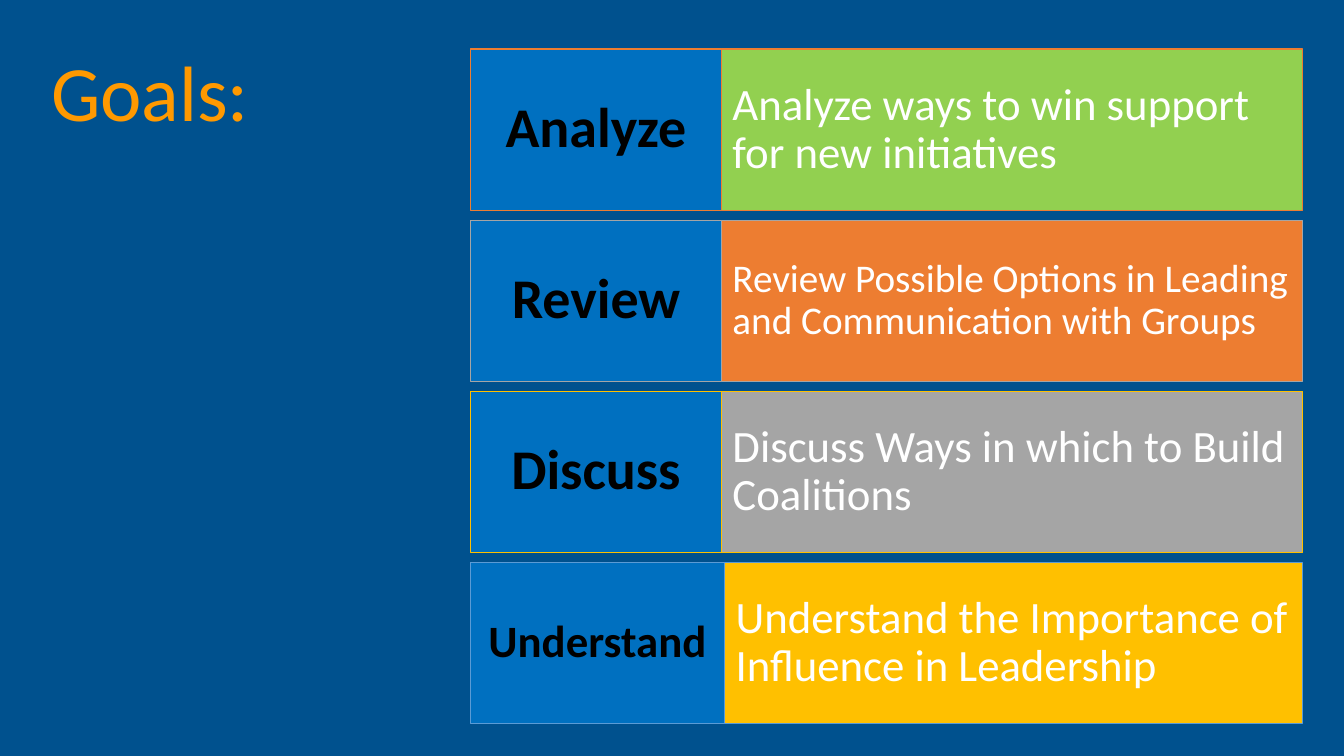
from dataclasses import dataclass

from pptx import Presentation
from pptx.dml.color import RGBColor
from pptx.enum.shapes import MSO_SHAPE
from pptx.enum.text import MSO_ANCHOR, PP_ALIGN
from pptx.util import Cm, Pt


@dataclass(frozen=True)
class Theme:
    font: str = "Calibri"
    background: str = "00518E"
    heading: str = "FF9900"
    label_fill: str = "0070C0"
    label_text: str = "000000"
    goal_text: str = "FFFFFF"
    green: str = "92D050"
    orange: str = "ED7D31"
    gray: str = "A5A5A5"
    gold: str = "FFC000"
    blue: str = "5B9BD5"
    heading_size: int = 56
    label_size: int = 40
    goal_size: int = 32
    small_size: int = 28


THEME = Theme()

ROWS_LEFT, ROWS_RIGHT, ROWS_TOP = 11.86, 32.82, 1.24
ROW_HEIGHT, ROW_PITCH = 4.06, 4.31
LABEL_WIDTH, WIDE_LABEL_WIDTH = 6.32, 6.4

# label, label size, label width, goal, goal size, goal fill, outline
GOALS = [
    ("Analyze", THEME.label_size, LABEL_WIDTH,
     "Analyze ways to win support for new initiatives",
     THEME.goal_size, THEME.green, THEME.orange),
    ("Review", THEME.label_size, LABEL_WIDTH,
     "Review Possible Options in Leading and Communication with Groups",
     THEME.small_size, THEME.orange, THEME.gray),
    ("Discuss", THEME.label_size, LABEL_WIDTH,
     "Discuss Ways in which to Build Coalitions",
     THEME.goal_size, THEME.gray, THEME.gold),
    ("Understand", THEME.goal_size, WIDE_LABEL_WIDTH,
     "Understand the Importance of Influence in Leadership",
     THEME.goal_size, THEME.gold, THEME.blue),
]


def rgb(color):
    return RGBColor.from_string(color)


def write(shape, text, *, size, color, bold=False, align=PP_ALIGN.LEFT,
          inset_x=0.25, inset_y=0.13):
    frame = shape.text_frame
    frame.word_wrap = True
    frame.vertical_anchor = MSO_ANCHOR.MIDDLE
    frame.margin_left = frame.margin_right = Cm(inset_x)
    frame.margin_top = frame.margin_bottom = Cm(inset_y)
    paragraph = frame.paragraphs[0]
    paragraph.alignment = align
    paragraph.line_spacing = 0.9
    run = paragraph.add_run()
    run.text = text
    run.font.name = THEME.font
    run.font.size = Pt(size)
    run.font.bold = bold
    run.font.color.rgb = rgb(color)


def add_panel(slide, left, top, width, fill, outline):
    panel = slide.shapes.add_shape(MSO_SHAPE.RECTANGLE, Cm(left), Cm(top),
                                   Cm(width), Cm(ROW_HEIGHT))
    panel.shadow.inherit = False
    panel.fill.solid()
    panel.fill.fore_color.rgb = rgb(fill)
    panel.line.color.rgb = rgb(outline)
    panel.line.width = Pt(1)
    return panel


def add_heading(slide, text):
    heading = slide.shapes.add_textbox(Cm(0.81), Cm(0.91), Cm(5.72), Cm(3.05))
    write(heading, text, size=THEME.heading_size, color=THEME.heading,
          align=PP_ALIGN.RIGHT)


def add_goal_row(slide, top, label, label_size, label_width,
                 goal, goal_size, goal_fill, outline):
    split = ROWS_LEFT + label_width
    goal_panel = add_panel(slide, split, top, ROWS_RIGHT - split,
                           goal_fill, outline)
    write(goal_panel, goal, size=goal_size, color=THEME.goal_text,
          inset_x=0.28, inset_y=1.04)
    label_panel = add_panel(slide, ROWS_LEFT, top, label_width,
                            THEME.label_fill, outline)
    write(label_panel, label, size=label_size, color=THEME.label_text,
          bold=True, align=PP_ALIGN.CENTER, inset_x=0.2, inset_y=0.41)


def main():
    deck = Presentation()
    deck.slide_width, deck.slide_height = Cm(33.87), Cm(19.05)
    slide = deck.slides.add_slide(deck.slide_layouts[6])
    slide.background.fill.solid()
    slide.background.fill.fore_color.rgb = rgb(THEME.background)

    add_heading(slide, "Goals:")
    for index, goal in enumerate(GOALS):
        add_goal_row(slide, ROWS_TOP + index * ROW_PITCH, *goal)

    deck.save("out.pptx")


if __name__ == "__main__":
    main()
